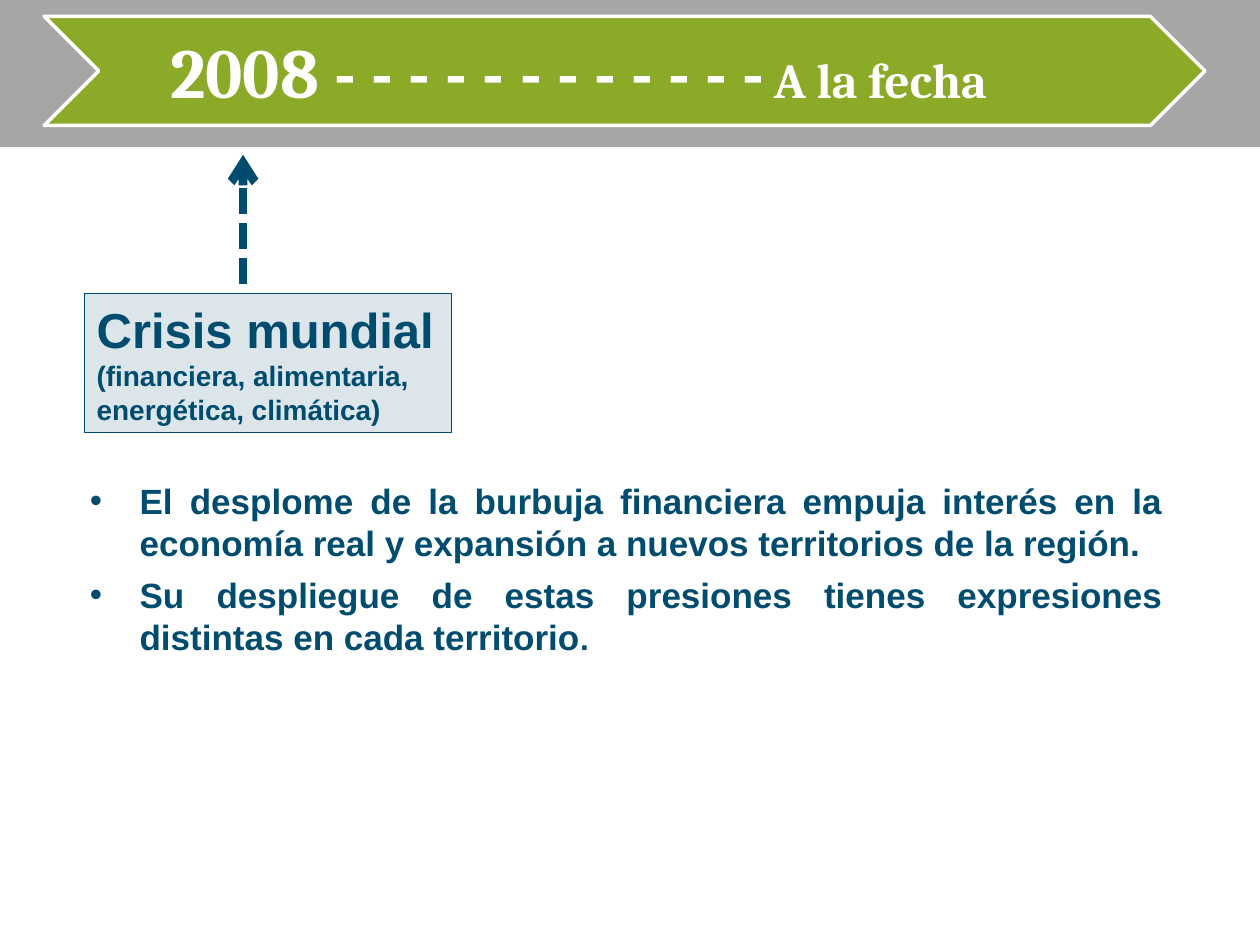
from lxml.etree import SubElement
from pptx import Presentation
from pptx.dml.color import RGBColor
from pptx.enum.dml import MSO_LINE
from pptx.enum.shapes import MSO_CONNECTOR, MSO_SHAPE
from pptx.enum.text import MSO_ANCHOR, MSO_AUTO_SIZE, PP_ALIGN
from pptx.oxml.ns import qn
from pptx.util import Cm, Pt

GRAY = RGBColor(0xA6, 0xA6, 0xA6)
GREEN = RGBColor(0x8B, 0xAA, 0x27)
WHITE = RGBColor(0xFF, 0xFF, 0xFF)
BLUE = RGBColor(0x00, 0x4C, 0x6F)


def write(para, text, size, font="Arial", color=BLUE, bold=True):
    """Add one formatted run to a paragraph."""
    run = para.add_run()
    run.text = text
    run.font.size = Pt(size)
    run.font.name = font
    run.font.bold = bold
    run.font.color.rgb = color


class Deck:
    """Hold the style and the slide in hand."""

    def __init__(self):
        """Start a deck with one title and content slide."""
        self.prs = Presentation()
        self.prs.slide_width, self.prs.slide_height = Cm(25.4), Cm(19.05)
        self.slide = self.prs.slides.add_slide(self.prs.slide_layouts[1])
        self.shapes = self.slide.shapes

    def place(self, shape, box):
        """Put a placeholder in a box, in front of what is drawn so far."""
        shape.left, shape.top, shape.width, shape.height = map(Cm, box)
        tree = shape.element.getparent()
        tree.append(shape.element)
        shape.text_frame.auto_size = MSO_AUTO_SIZE.NONE
        return shape.text_frame

    def block(self, kind, box, fill, line=None, width=1, alpha=None):
        """Draw a filled preset shape."""
        shape = self.shapes.add_shape(kind, *map(Cm, box))
        shape.shadow.inherit = False
        shape.fill.solid()
        shape.fill.fore_color.rgb = fill
        if alpha:
            color = shape.element.spPr.find(".//" + qn("a:srgbClr"))
            SubElement(color, qn("a:alpha"), val=str(alpha * 1000))
        if line is None:
            shape.line.fill.background()
        else:
            shape.line.color.rgb = line
            shape.line.width = Pt(width)
        return shape

    def title(self, box, runs):
        """Fill the title placeholder with sized runs."""
        frame = self.place(self.shapes.title, box)
        frame.vertical_anchor = MSO_ANCHOR.MIDDLE
        frame.margin_left = Cm(0.53)
        frame.margin_right = frame.margin_top = frame.margin_bottom = Cm(0.18)
        para = frame.paragraphs[0]
        para.alignment = PP_ALIGN.LEFT
        for text, size in runs:
            write(para, text, size, font="Cambria", color=WHITE)

    def note(self, box, runs):
        """Draw a pale framed box of text."""
        shape = self.block(MSO_SHAPE.RECTANGLE, box, BLUE, BLUE, 0.75, 14)
        frame = shape.text_frame
        frame.word_wrap = True
        frame.vertical_anchor = MSO_ANCHOR.TOP
        para = frame.paragraphs[0]
        para.alignment = PP_ALIGN.LEFT
        for text, size in runs:
            write(para, text, size)

    def list(self, box, items):
        """Fill the body placeholder with justified bullets."""
        frame = self.place(self.slide.placeholders[1], box)
        for num, runs in enumerate(items):
            para = frame.add_paragraph() if num else frame.paragraphs[0]
            props = para._p.get_or_add_pPr()
            props.set("marL", str(Cm(1.26)))
            props.set("indent", str(Cm(-1)))
            SubElement(props, qn("a:buFont"), typeface="Arial")
            SubElement(props, qn("a:buChar"), char="•")
            para.alignment = PP_ALIGN.JUSTIFY
            para.space_before, para.space_after = Pt(0), Pt(6)
            for text, size in runs:
                write(para, text, size)

    def arrow(self, start, end):
        """Draw a thick dotted arrow."""
        link = self.shapes.add_connector(
            MSO_CONNECTOR.STRAIGHT, *map(Cm, start + end))
        link.line.color.rgb = BLUE
        link.line.width = Pt(5)
        link.line.dash_style = MSO_LINE.ROUND_DOT
        link.line.dash_style = MSO_LINE.SQUARE_DOT
        SubElement(link.line._get_or_add_ln(), qn("a:tailEnd"), type="arrow")
        SubElement(link.element.spPr, qn("a:effectLst"))


def main():
    """Build the slide on the world crisis."""
    deck = Deck()
    deck.block(MSO_SHAPE.RECTANGLE, (0, 0, 25.4, 2.97), GRAY)
    deck.block(MSO_SHAPE.CHEVRON, (0.89, 0.33, 23.4, 2.2), GREEN, WHITE, 2)
    deck.title((2.9, 0.53, 20.2, 1.8), [
        ("2008 " + " ".join("-" * 12), 40), (" ", 24), ("A la fecha", 28)])
    deck.note((1.7, 5.92, 7.4, 2.8), [
        ("Crisis mundial ", 28),
        ("(financiera, alimentaria, energética, climática)", 16)])
    deck.list((1.3, 9.53, 22.4, 3.88), [
        [("El desplome de la burbuja financiera empuja interés en la "
          "economía real y expansión a nuevos territorios de la región.", 20)],
        [("Su despliegue de estas presiones tienes expresiones "
          "distintas en cada territorio", 20), (".", 18)]])
    deck.arrow((4.9, 5.72), (4.9, 3.12))
    deck.prs.save("out.pptx")


if __name__ == "__main__":
    main()
